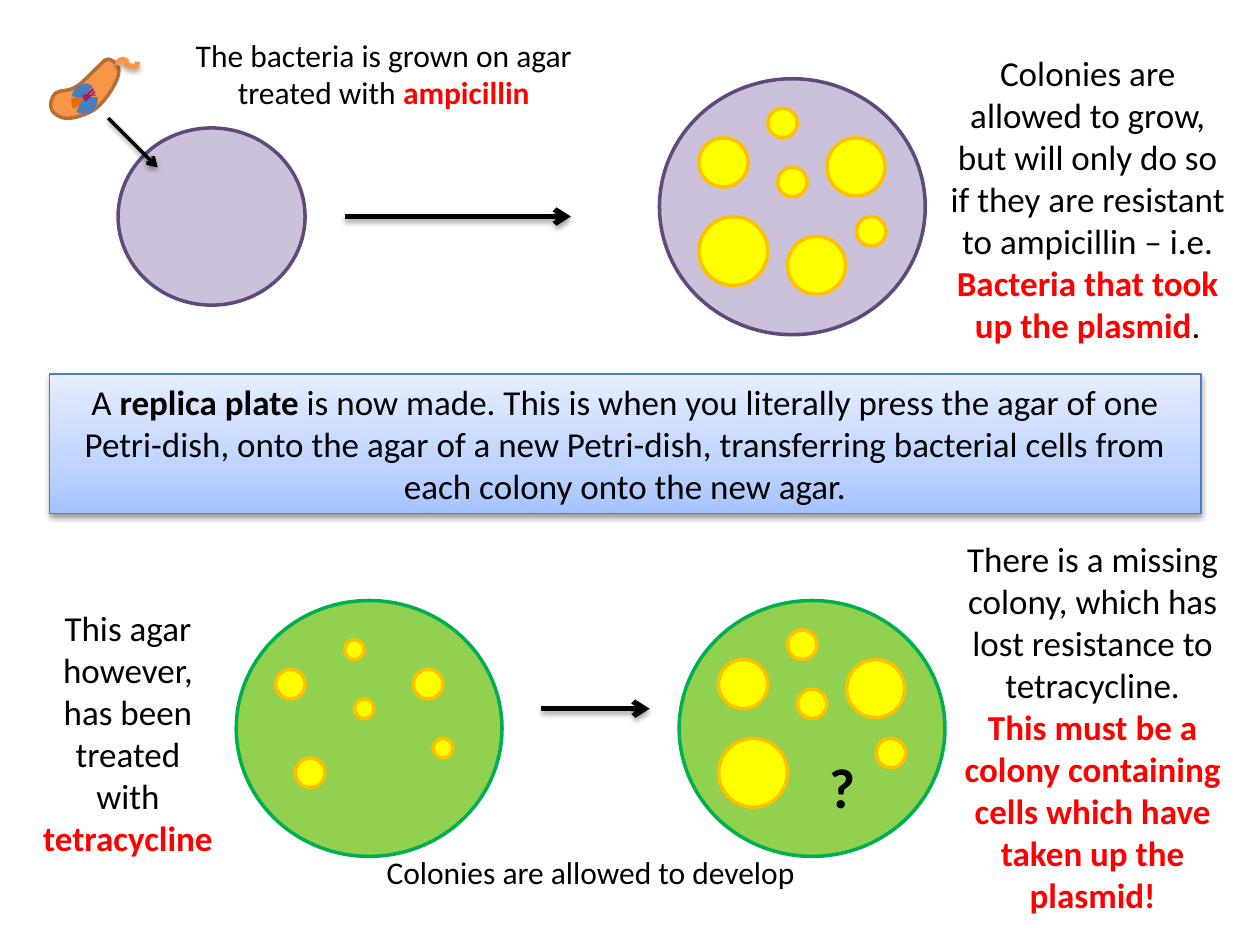
from copy import deepcopy

from lxml import etree
from pptx import Presentation
from pptx import util as u
from pptx.dml.color import RGBColor
from pptx.enum import shapes, text
from pptx.oxml.ns import qn

# The slide is a grid of 128 columns and 96 rows of square cells
CELL = u.Inches(10) / 128
BLACK, RED = "000000", "FF0000"
LILAC, PURPLE = "CCC1DA", "604A7B"
LIME, GREEN = "92D050", "00B050"
YELLOW, AMBER = "FFFF00", "FFC000"
BLUE, ORANGE, VIOLET = "4B7EBC", "F79646", "7030A0"

# Shadows: opacity in percent, blur and distance in points
SOFT, STRONG = (35, 3.1, 1.8), (38, 3.1, 1.6)

# Colonies: column, row and diameter in cells, from the corner of the dish
LOST_COLONY = (13, 16, 5.9)
GROWN = [(4, 6, 5), (11, 3, 3), (17, 6, 5.9), (12, 9, 3), (4, 14, 7),
         LOST_COLONY, (20, 14, 3)]
PRESSED = [(4, 7, 3), (18, 7, 3), (12, 10, 2), (6, 16, 3), (20, 14, 2), (11, 4, 2)]

# Bacterium outlines in hundredths of an inch: start, then Bezier or line segments
CELL_BODY = [(79, 52), (74, 56, 66, 66, 60, 69), (54, 73, 48, 71, 44, 74),
             (41, 77, 39, 83, 41, 87), (42, 90, 48, 94, 53, 94),
             (59, 94, 69, 91, 75, 87), (82, 82, 88, 73, 91, 67),
             (94, 62, 95, 57, 94, 53), (93, 50, 88, 47, 86, 47),
             (83, 47, 83, 48, 79, 52)]
FLAGELLUM = [(93, 52), (94, 50, 94, 48, 95, 48), (96, 47, 99, 47, 100, 48),
             (101, 48, 99, 51, 101, 52), (102, 52, 106, 53, 107, 53),
             (109, 53, 109, 51, 109, 49)]
PLASMID = [
    ([(70, 73), (69, 72, 68, 71, 67, 72), (65, 72, 64, 74, 63, 75),
      (62, 76, 62, 77, 62, 78)], BLUE, 7.75),
    ([(62, 78), (62, 80, 62, 81, 62, 82), (63, 83, 63, 83, 63, 84)], "E46C0A", 7.75),
    ([(63, 84), (64, 84, 64, 85, 65, 85), (66, 85, 68, 85, 69, 85),
      (70, 84, 71, 82, 72, 81), (72, 80, 72, 78, 72, 77)], BLUE, 7.75),
    ([(70.4, 73.8), (70, 73.4)], VIOLET, 7.75),
    ([(72, 77), (72, 76, 72, 76, 71, 76), (71, 76, 71, 75, 71, 75)], VIOLET, 7.75),
    ([(70, 74), (71, 75)], RED, 7.25),
]


def colour(value):
    return RGBColor.from_string(value)


def cells(*counts):
    return [u.Emu(round(count * CELL)) for count in counts]


def style_line(item, line, width, shadow=None):
    """Draw the outline, then replace the theme shadow."""
    item.line.color.rgb = colour(line)
    item.line.width = u.Pt(width)
    effects = etree.SubElement(item._element.spPr, qn("a:effectLst"))
    if shadow:
        opacity, blur, distance = shadow
        outer = etree.SubElement(
            effects, qn("a:outerShdw"), blurRad=str(u.Pt(blur)),
            dist=str(u.Pt(distance)), dir="5400000", rotWithShape="0")
        black = etree.SubElement(outer, qn("a:srgbClr"), val=BLACK)
        etree.SubElement(black, qn("a:alpha"), val=str(opacity * 1000))


def add_circle(slide, box, fill, line):
    circle = slide.shapes.add_shape(shapes.MSO_SHAPE.OVAL, *cells(*box))
    circle.fill.solid()
    circle.fill.fore_color.rgb = colour(fill)
    style_line(circle, line, 2)


def add_dish(slide, col, row, fill, line, colonies):
    add_circle(slide, (col, row, 27, 26), fill, line)
    for right, down, size in colonies:
        add_circle(slide, (col + right, row + down, size, size), YELLOW, AMBER)


def add_arrow(slide, ends, width, shadow):
    arrow = slide.shapes.add_connector(shapes.MSO_CONNECTOR.STRAIGHT, *cells(*ends))
    style_line(arrow, BLACK, width, shadow)
    etree.SubElement(arrow.line._get_or_add_ln(), qn("a:tailEnd"), type="arrow")


def write(frame, paragraphs, size, align=text.PP_ALIGN.CENTER):
    """Each paragraph is a list of (words, colour, bold)."""
    frame.word_wrap = True
    frame.auto_size = text.MSO_AUTO_SIZE.SHAPE_TO_FIT_TEXT
    for index, pieces in enumerate(paragraphs):
        paragraph = frame.add_paragraph() if index else frame.paragraphs[0]
        paragraph.alignment = align
        for words, ink, bold in pieces:
            run = paragraph.add_run()
            run.text = words
            run.font.name = "Calibri"
            run.font.size = u.Pt(size)
            run.font.bold = bold
            run.font.color.rgb = colour(ink)


def add_caption(slide, box, paragraphs, size=20, align=text.PP_ALIGN.CENTER):
    write(slide.shapes.add_textbox(*cells(*box)).text_frame, paragraphs, size, align)


def add_banner(slide, box, paragraphs):
    banner = slide.shapes.add_shape(shapes.MSO_SHAPE.RECTANGLE, *cells(*box))
    banner.fill.gradient()
    banner.fill.gradient_angle = 90
    first_stop = banner._element.spPr.find(".//" + qn("a:gs"))
    first_stop.addnext(deepcopy(first_stop))
    tints = [(0, "A4C4FF"), (0.35, "BFD4FF"), (1, "E6EEFF")]
    for stop, (position, tint) in zip(banner.fill.gradient_stops, tints):
        stop.position = position
        stop.color.rgb = colour(tint)
    style_line(banner, BLUE, 0.75, STRONG)
    write(banner.text_frame, paragraphs, 20)


def bend(curve, segments):
    """Merge the three lines through each segment's handles into one Bezier."""
    lines = iter(list(curve._element.spPr.iter(qn("a:lnTo"))))
    for segment in segments:
        first = next(lines)
        if len(segment) == 2:
            continue
        bezier = etree.Element(qn("a:cubicBezTo"))
        first.addprevious(bezier)
        for line in (first, next(lines), next(lines)):
            bezier.append(line[0])
            line.getparent().remove(line)


def add_curve(group, outline, line, width, fill=None, shadow=None):
    points = [(u.Inches(x / 100), u.Inches(y / 100))
              for part in outline for x, y in zip(part[::2], part[1::2])]
    builder = group.shapes.build_freeform(*points[0])
    builder.add_line_segments(points[1:], close=fill is not None)
    curve = builder.convert_to_shape()
    bend(curve, outline[1:])
    if fill:
        curve.fill.solid()
        curve.fill.fore_color.rgb = colour(fill)
    else:
        curve.fill.background()
    style_line(curve, line, width, shadow)


def add_bacterium(slide):
    bacterium = slide.shapes.add_group_shape()
    add_curve(bacterium, CELL_BODY, "B76F34", 2, fill=ORANGE)
    add_curve(bacterium, FLAGELLUM, ORANGE, 3, shadow=SOFT)
    for outline, line, width in PLASMID:
        add_curve(bacterium, outline, line, width)


def main():
    deck = Presentation()
    deck.slide_width, deck.slide_height = cells(128, 96)
    slide = deck.slides.add_slide(deck.slide_layouts[6])

    # Growing on ampicillin
    add_circle(slide, (12, 13, 19, 18), LILAC, PURPLE)
    add_bacterium(slide)
    add_arrow(slide, (11, 12, 16, 17), 2, STRONG)
    add_caption(slide, (17, 3, 44, 9), [[
        ("The bacteria is grown on agar treated with ", BLACK, False),
        ("ampicillin", RED, True)]], size=18)
    add_arrow(slide, (35, 22, 58, 22), 3, SOFT)
    add_dish(slide, 67, 8, LILAC, PURPLE, GROWN)
    add_caption(slide, (95, 4.6, 31, 31.5), [[
        ("Colonies are allowed to grow, but will only do so if they are resistant "
         "to ampicillin – i.e. ", BLACK, False),
        ("Bacteria that took up the plasmid", RED, True), (".", BLACK, False)]])

    # Replica plating
    add_banner(slide, (5, 38, 117, 14.2), [[
        ("A ", BLACK, False), ("replica plate ", BLACK, True),
        ("is now made. This is when you literally press the agar of one Petri-dish, "
         "onto the agar of a new Petri-dish, transferring bacterial cells from each "
         "colony onto the new agar.", BLACK, False)]])

    # Growing on tetracycline
    add_dish(slide, 24, 61, LIME, GREEN, PRESSED)
    add_caption(slide, (3, 61, 20, 27.1), [[
        ("This agar however, has been treated with ", BLACK, False),
        ("tetracycline", RED, True)]])
    add_arrow(slide, (55, 72, 66, 72), 3, SOFT)
    add_dish(slide, 69, 61, LIME, GREEN, [c for c in GROWN if c != LOST_COLONY])
    add_caption(slide, (38, 86, 44, 9),
                [[("Colonies are allowed to develop", BLACK, False)]], size=18)
    add_caption(slide, (83, 75.8, 5, 8.2), [[("?", BLACK, True)]], 32, text.PP_ALIGN.LEFT)
    add_caption(slide, (96, 54, 30, 40), [
        [("There is a missing colony, which has lost resistance to tetracycline.",
          BLACK, False)],
        [("This must be a colony containing cells which have taken up the plasmid!",
          RED, True)]])

    deck.save("out.pptx")


if __name__ == "__main__":
    main()
